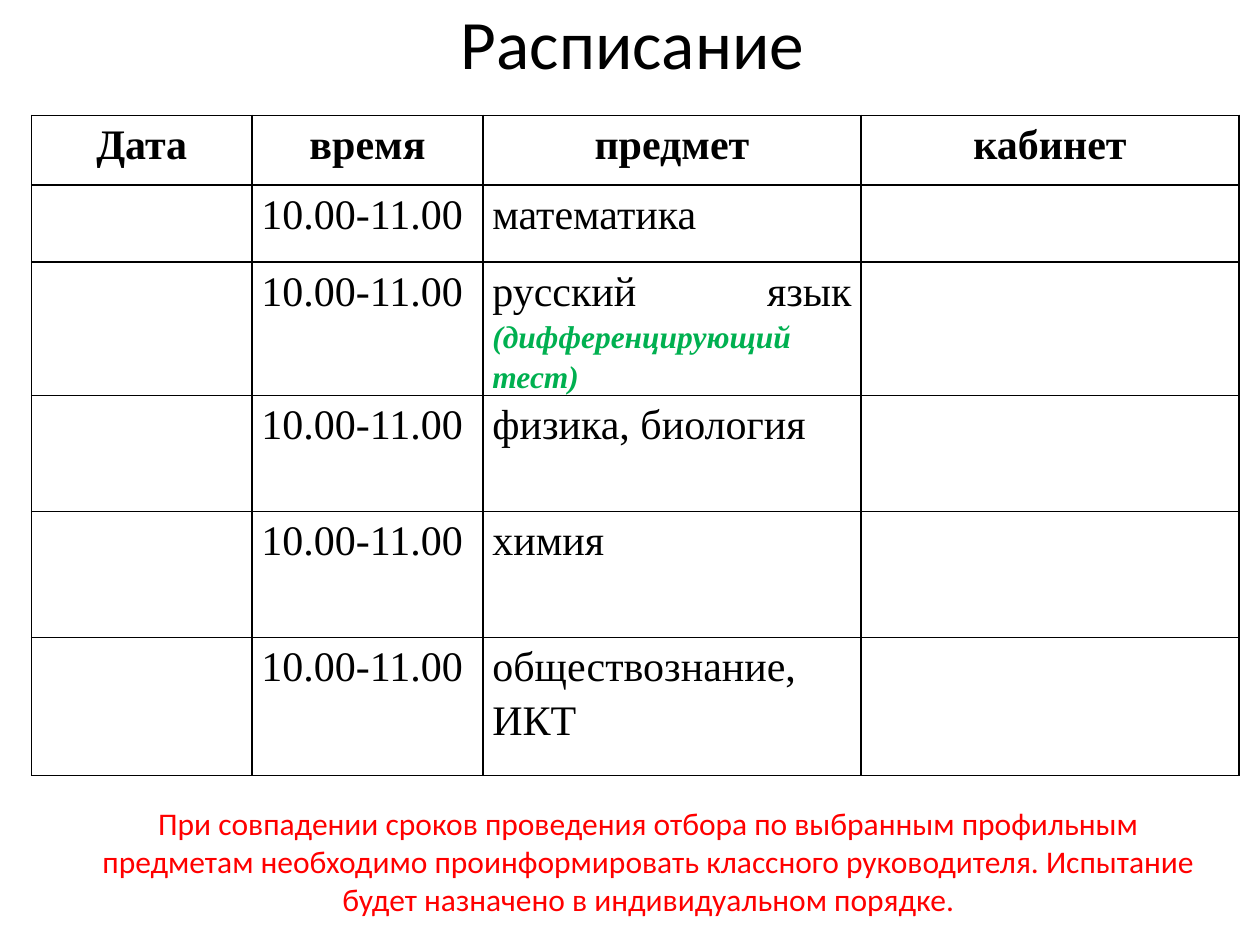
from pptx import Presentation
from pptx.dml.color import RGBColor
from pptx.enum.text import MSO_ANCHOR, PP_ALIGN
from pptx.oxml.ns import qn
from pptx.util import Pt
from lxml import etree

BLACK = RGBColor(0x00, 0x00, 0x00)
WHITE = RGBColor(0xFF, 0xFF, 0xFF)
GREEN = RGBColor(0x00, 0xB0, 0x50)
RED = RGBColor(0xFF, 0x00, 0x00)

MID = MSO_ANCHOR.MIDDLE
TOP = MSO_ANCHOR.TOP
MIDDLE = PP_ALIGN.CENTER
JUST = PP_ALIGN.JUSTIFY


class Deck:
    """Holds the style and the current slide."""
    sans = "Calibri"
    serif = "Times New Roman"

    def __init__(self, wide, high):
        self.prs = Presentation()
        self.prs.slide_width, self.prs.slide_height = Pt(wide), Pt(high)
        self.slide = self.prs.slides.add_slide(self.prs.slide_layouts[6])

    def run(self, para, text, font, size, color=BLACK, bold=False, slant=False):
        run = para.add_run()
        run.text = text
        face = run.font
        face.name, face.size = font, Pt(size)
        face.bold, face.italic = bold, slant
        face.color.rgb = color

    def text(self, box, text, size, color=BLACK, anchor=TOP, indent=0, before=0):
        frame = self.slide.shapes.add_textbox(*map(Pt, box)).text_frame
        frame.word_wrap = True
        frame.vertical_anchor = anchor
        frame.margin_left = Pt(7.2 + indent)
        para = frame.paragraphs[0]
        para.alignment = MIDDLE
        para.space_before = Pt(before)
        self.run(para, text, self.sans, size, color)

    def edge(self, cell):
        props = cell._tc.get_or_add_tcPr()
        for spot, side in enumerate(("a:lnL", "a:lnR", "a:lnT", "a:lnB")):
            line = etree.Element(qn(side), w=str(Pt(1)))
            fill = etree.SubElement(line, qn("a:solidFill"))
            etree.SubElement(fill, qn("a:srgbClr"), val=str(BLACK))
            props.insert(spot, line)

    def cell(self, cell, runs, align, bold):
        cell.fill.solid()
        cell.fill.fore_color.rgb = WHITE
        self.edge(cell)
        cell.margin_left = cell.margin_right = Pt(5.4)
        cell.margin_top = cell.margin_bottom = Pt(0)
        para = cell.text_frame.paragraphs[0]
        para.alignment = align
        para.line_spacing = 1.15
        for text, size, color, strong in runs:
            self.run(para, text, self.serif, size, color, bold or strong, strong)

    def table(self, box, cols, highs, rows):
        frame = self.slide.shapes.add_table(len(rows), len(cols), *map(Pt, box))
        table = frame.table
        table.first_row = table.horz_banding = False
        for col, wide in zip(table.columns, cols):
            col.width = Pt(wide)
        for row, high in zip(table.rows, highs):
            row.height = Pt(high)
        for r, row in enumerate(rows):
            for c, runs in enumerate(row):
                head = r == 0
                self.cell(table.cell(r, c), runs, MIDDLE if head else JUST, head)


def plain(text):
    return [(text, 24, BLACK, False)]


def main():
    deck = Deck(720, 540)

    # Timetable
    tasks = [
        plain("математика"),
        plain("русский язык ") + [("(дифференцирующий тест)", 18, GREEN, True)],
        plain("физика, биология"),
        plain("химия"),
        plain("обществознание, ИКТ"),
    ]
    rows = [[plain(name) for name in ("Дата", "время", "предмет", "кабинет")]]
    rows += [[[], plain("10.00-11.00"), task, []] for task in tasks]
    deck.table((18, 66, 690, 384), (126, 132, 216, 216),
               (39.6, 44, 42, 66.4, 72, 79), rows)

    # Title
    deck.text((42, 0, 648, 48), "Расписание ", 39.6, anchor=MID)

    # Note below the table
    deck.text((12, 456, 690, 84),
              "При совпадении сроков проведения отбора по выбранным профильным "
              "предметам необходимо проинформировать классного руководителя. "
              "Испытание будет назначено в индивидуальном порядке.",
              18, RED, indent=27, before=3.6)

    deck.prs.save("out.pptx")


if __name__ == "__main__":
    main()
